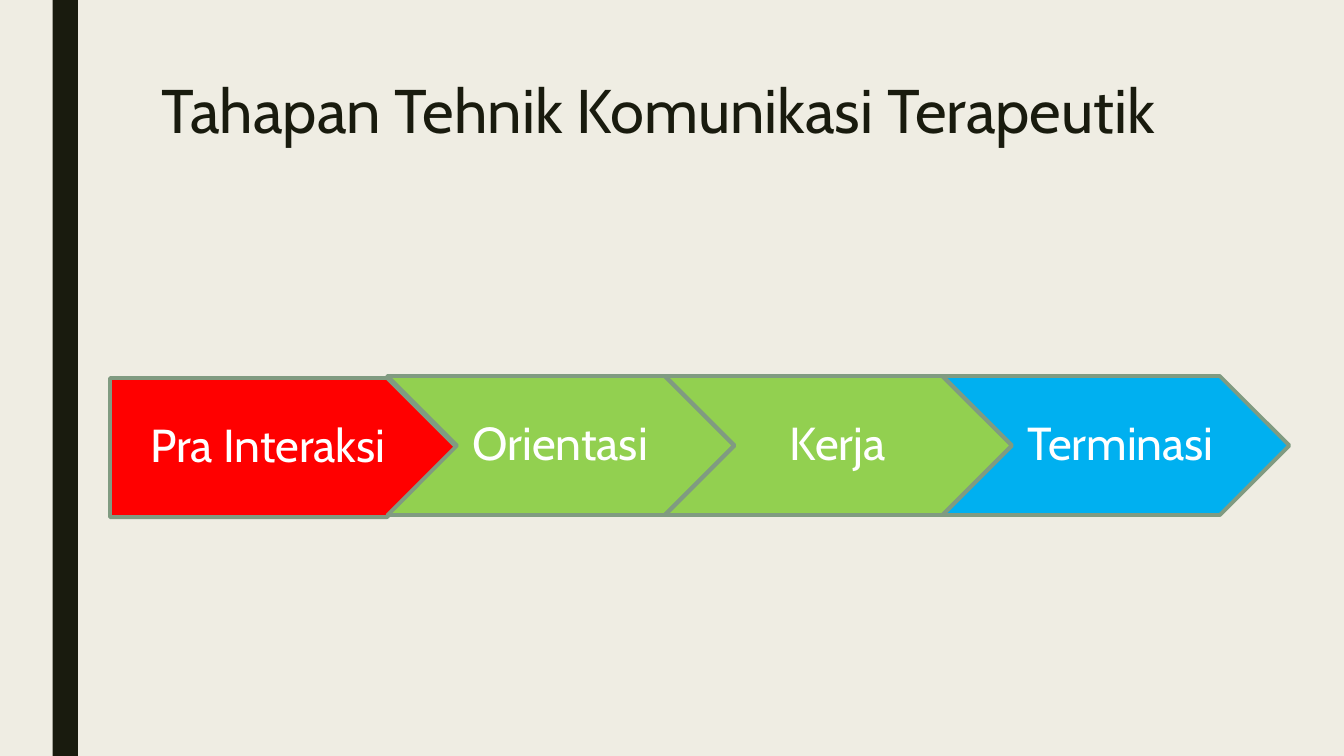
"""Build a slide showing the four stages of therapeutic communication."""
from dataclasses import dataclass

from pptx import Presentation
from pptx.dml.color import RGBColor
from pptx.enum.shapes import MSO_SHAPE as Preset
from pptx.enum.text import MSO_ANCHOR as Anchor, PP_ALIGN as Align
from pptx.util import Inches, Pt

WIDTH, HEIGHT = Inches(13.33), Inches(7.5)
FONT = "Cabin"
COLOURS = {
    "paper": "EFEDE3",
    "ink": "191B0E",
    "outline": "809B81",
    "white": "FFFFFF",
    "red": "FF0000",
    "green": "92D050",
    "blue": "00B0F0",
}
STAGE_LEFT, STAGE_STEP = 8.18, 20.65
STAGE_WIDTH, STAGE_HEIGHT = 25.8, 18.4
POINT = 5.16


@dataclass
class Box:
    left: float
    top: float
    width: float
    height: float

    def place(self) -> tuple[int, int, int, int]:
        return across(self.left), down(self.top), across(self.width), down(self.height)


@dataclass
class Stage:
    label: str
    colour: str
    preset: Preset = Preset.CHEVRON
    top: float = 49.73
    notch: float = POINT
    inset: float = 1.05


STAGES = [
    Stage("Pra Interaksi ", "red", Preset.PENTAGON, top=50, notch=0, inset=1.43),
    Stage("Orientasi ", "green"),
    Stage("Kerja ", "green"),
    Stage("Terminasi ", "blue"),
]


def across(percent: float) -> int:
    return round(WIDTH * percent / 100)


def down(percent: float) -> int:
    return round(HEIGHT * percent / 100)


def colour(name: str) -> RGBColor:
    return RGBColor.from_string(COLOURS[name])


def add_block(page, preset: Preset, box: Box, fill: str, outline: str = "") -> None:
    block = page.shapes.add_shape(preset, *box.place())
    block.shadow.inherit = False
    block.fill.solid()
    block.fill.fore_color.rgb = colour(fill)
    if outline:
        block.line.color.rgb = colour(outline)
        block.line.width = Pt(2.75)
    else:
        block.line.fill.background()


def add_text(page, box: Box, text: str, size: int, ink: str, spacing: float,
             align: Align = Align.LEFT, anchor: Anchor = Anchor.TOP):
    frame = page.shapes.add_textbox(*box.place()).text_frame
    frame.word_wrap = True
    frame.vertical_anchor = anchor
    para = frame.paragraphs[0]
    para.alignment = align
    para.line_spacing = spacing
    run = para.add_run()
    run.text = text
    run.font.name = FONT
    run.font.size = Pt(size)
    run.font.color.rgb = colour(ink)
    return frame


def add_stage(page, stage: Stage, column: int) -> None:
    left = STAGE_LEFT + column * STAGE_STEP
    add_block(page, stage.preset, Box(left, stage.top, STAGE_WIDTH, STAGE_HEIGHT),
              stage.colour, "outline")
    label_width = STAGE_WIDTH - 2 * POINT if stage.notch else STAGE_WIDTH - POINT / 2
    label_box = Box(left + stage.notch, stage.top, label_width, STAGE_HEIGHT)
    frame = add_text(page, label_box, stage.label, 33, "white", 0.9,
                     Align.CENTER, Anchor.MIDDLE)
    frame.margin_left, frame.margin_right = across(stage.inset), across(0.38)
    frame.margin_top = frame.margin_bottom = down(1.33)


def main() -> None:
    deck = Presentation()
    deck.slide_width, deck.slide_height = WIDTH, HEIGHT
    page = deck.slides.add_slide(deck.slide_layouts[6])
    page.background.fill.solid()
    page.background.fill.fore_color.rgb = colour("paper")
    add_block(page, Preset.RECTANGLE, Box(3.92, 0, 1.88, 100), "ink")
    add_text(page, Box(11.25, 10, 78.77, 21.6),
             "Tahapan Tehnik Komunikasi Terapeutik", 44, "ink", 0.89)
    for column, stage in enumerate(STAGES):
        add_stage(page, stage, column)
    deck.save("out.pptx")


if __name__ == "__main__":
    main()
